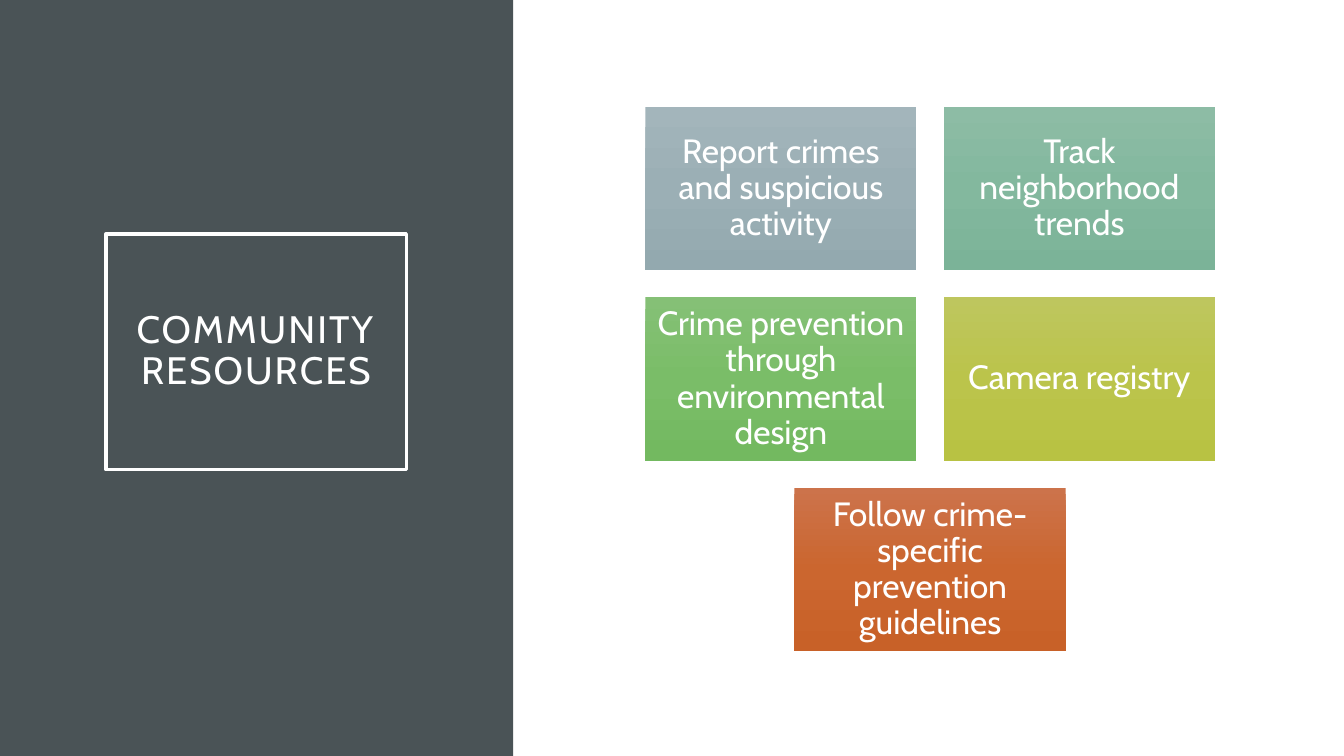
from copy import deepcopy
from dataclasses import dataclass

from pptx import Presentation
from pptx import util as u
from pptx.dml.color import RGBColor
from pptx.enum import shapes, text
from pptx.oxml import ns


@dataclass(frozen=True)
class Theme:
    font: str = "Cabin"
    white: str = "FFFFFF"
    panel: str = "4A5356"
    title: float = 27.3
    body: float = 24


@dataclass(frozen=True)
class Grid:
    left: float = 6.4
    top: float = 1.06
    wide: float = 2.69
    high: float = 1.62
    gap: float = 0.27
    cols: int = 2

    def place(self, i, total):
        row, col = divmod(i, self.cols)
        count = min(self.cols, total - row * self.cols)
        shift = (self.cols - count) / 2
        x = self.left + (col + shift) * (self.wide + self.gap)
        y = self.top + row * (self.high + self.gap)
        return x, y, self.wide, self.high


THEME = Theme()
GRID = Grid()
CARDS = [
    ("Report crimes and suspicious activity", ("A3B5BB", "9BAFB5", "93A9AF")),
    ("Track neighborhood trends", ("8DBCA5", "83B89E", "7BB398")),
    ("Crime prevention through environmental design",
     ("85C076", "7ABD68", "73B960")),
    ("Camera registry", ("BEC65E", "BBC44B", "B8C243")),
    ("Follow crime-specific prevention guidelines",
     ("CC734B", "CB662F", "C86128")),
]


def color(code):
    return RGBColor.from_string(code)


def box(slide, area):
    shape = slide.shapes.add_shape(
        shapes.MSO_SHAPE.RECTANGLE, *(u.Inches(n) for n in area))
    shape.shadow.inherit = False
    shape.line.fill.background()
    return shape


def write(shape, words, size, inset):
    frame = shape.text_frame
    frame.word_wrap = True
    frame.vertical_anchor = text.MSO_ANCHOR.MIDDLE
    frame.margin_left = frame.margin_right = u.Inches(inset)
    frame.margin_top = frame.margin_bottom = u.Inches(inset)
    para = frame.paragraphs[0]
    para.text = words
    para.alignment = text.PP_ALIGN.CENTER
    para.line_spacing = 0.9
    para.font.name = THEME.font
    para.font.size = u.Pt(size)
    para.font.color.rgb = color(THEME.white)
    return para


def shade(shape, codes):
    fill = shape.fill
    fill.gradient()
    fill.gradient_angle = 270
    stops = shape.element.spPr.find(".//" + ns.qn("a:gsLst"))
    stops.insert(1, deepcopy(stops[0]))
    for stop, code, share in zip(fill.gradient_stops, codes, (0, 0.5, 1)):
        stop.color.rgb = color(code)
        stop.position = share


def panel(slide):
    shape = box(slide, (0, 0, 5.09, 7.5))
    shape.fill.solid()
    shape.fill.fore_color.rgb = color(THEME.panel)


def title(slide, words):
    shape = box(slide, (1.05, 2.32, 2.98, 2.34))
    shape.fill.background()
    shape.line.color.rgb = color(THEME.white)
    shape.line.width = u.Pt(2.5)
    para = write(shape, words, THEME.title, 0.2)
    para.runs[0].font._element.set("spc", "150")


def card(slide, area, words, codes):
    shape = box(slide, area)
    shade(shape, codes)
    write(shape, words, THEME.body, 0.1)


def main():
    deck = Presentation()
    deck.slide_width = u.Inches(13.33)
    deck.slide_height = u.Inches(7.5)
    slide = deck.slides.add_slide(deck.slide_layouts[6])
    panel(slide)
    for i, (words, codes) in enumerate(CARDS):
        card(slide, GRID.place(i, len(CARDS)), words, codes)
    title(slide, "COMMUNITY RESOURCES")
    deck.save("out.pptx")


if __name__ == "__main__":
    main()
